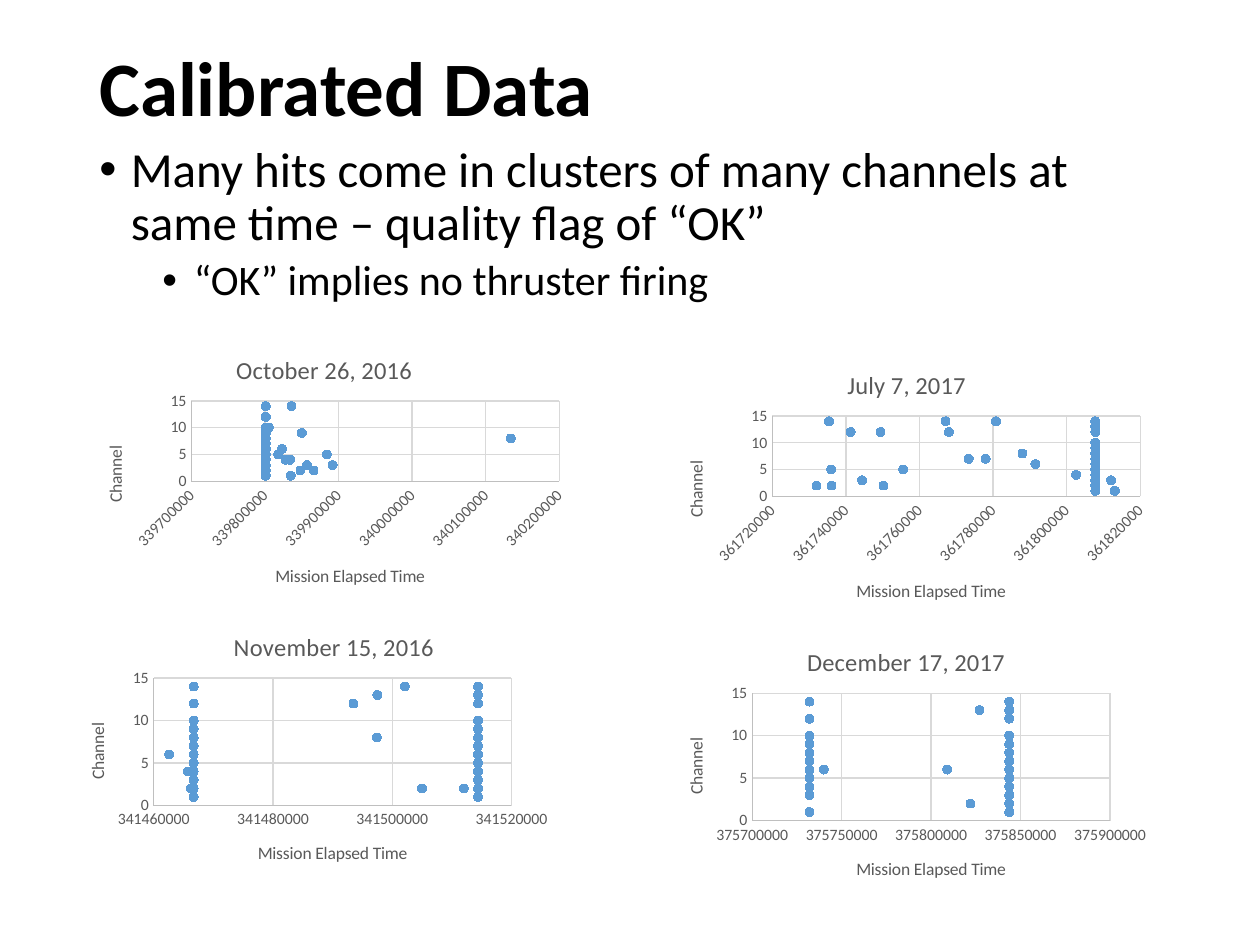
from lxml.etree import SubElement
from pptx import Presentation
from pptx.chart.data import XyChartData
from pptx.dml.color import RGBColor
from pptx.enum.chart import XL_CHART_TYPE, XL_MARKER_STYLE, XL_TICK_MARK
from pptx.enum.text import MSO_ANCHOR
from pptx.oxml import parse_xml
from pptx.oxml.ns import nsdecls, qn
from pptx.util import Inches, Pt

FONT = "Calibri"
COLORS = {"text": "000000", "label": "595959", "axis": "BFBFBF",
          "grid": "D9D9D9", "hit": "5B9BD5"}
TITLE = {"text": "Calibrated Data", "size": 44, "bold": True}
BULLETS = [
    {"text": "Many hits come in clusters of many channels at same time – quality flag of “OK”",
     "size": 28, "left": 0.25, "before": 0},
    {"text": "“OK” implies no thruster firing", "size": 24, "left": 0.75, "before": 5},
]
CHART_SIZE = (4, 2.2)
TIME_TITLE_AT = (0.4, 0.84)
CHANNEL_TITLE_AT = (0.06, 0.41)
SLANTED_PLOT = (0.24, 0.26, 0.73, 0.29)
LEVEL_PLOT = (0.2, 0.26, 0.71, 0.46)

# Hits are grouped as (mission elapsed time, channels hit at that time).
CHARTS = [
    {"title": "November 15, 2016", "at": (0.42, 4.81), "title_at": (0.35, 0.07),
     "plot": LEVEL_PLOT, "times": (341460000, 341520000, 20000),
     "hits": [
         (341462600, [6]), (341465700, [4]), (341466200, [2]),
         (341466700, [1, 2, 3, 4, 5, 6, 7, 8, 9, 10, 12, 14, 1, 2, 6]),
         (341493500, [12]), (341497400, [8]), (341497500, [13]),
         (341502100, [14]), (341505000, [2]), (341512000, [2]),
         (341514400, [13, 3, 4, 5, 6, 7, 8, 9, 10, 12, 13, 14, 1, 2, 3, 4, 5,
                      6, 7, 8, 9, 10, 12, 13, 14, 1, 2, 3])]},
    {"title": "July 7, 2017", "at": (5.17, 2.73), "title_at": (0.38, 0.07),
     "plot": SLANTED_PLOT, "times": (361720000, 361820000, 20000),
     "hits": [
         (361732000, [2]), (361735400, [14]), (361736000, [5]), (361736100, [2]),
         (361741300, [12]), (361744400, [3]), (361749400, [12]), (361750200, [2]),
         (361755600, [5]), (361767100, [14]), (361768000, [12]), (361773400, [7]),
         (361778000, [7]), (361780800, [14]), (361788000, [8]), (361791500, [6]),
         (361802600, [4]),
         (361807800, [5, 6, 4, 8, 9, 10, 7, 1, 13, 3, 12, 14, 2]),
         (361812100, [3]), (361813100, [1])]},
    {"title": "October 26, 2016", "at": (0.56, 2.61), "title_at": (0.32, 0.07),
     "plot": SLANTED_PLOT, "times": (339700000, 340200000, 100000),
     "hits": [
         (339801000, [3, 4, 5, 6, 7, 8, 9, 10, 12, 14, 1, 2, 8, 1]),
         (339805000, [10]), (339818000, [5]), (339823000, [6]), (339828000, [4]),
         (339834000, [4]), (339835000, [1]), (339836000, [14]), (339848000, [2]),
         (339850000, [9]), (339857000, [3]), (339866000, [2]), (339884000, [5]),
         (339892000, [3]), (340134000, [8])]},
    {"title": "December 17, 2017", "at": (5.17, 4.93), "title_at": (0.3, 0.07),
     "plot": LEVEL_PLOT, "times": (375700000, 375900000, 50000),
     "hits": [
         (375732000, [9, 12, 6, 7, 6, 4, 1, 10, 3, 8, 5, 14, 7]),
         (375740000, [6]), (375809000, [6]), (375822000, [2]), (375827000, [13]),
         (375843700, [13, 13, 2, 3, 3, 5, 6, 8, 8, 10, 10, 12, 12, 13, 14, 4, 2,
                      2, 14, 9, 4, 5, 1, 7, 1, 4, 3, 1])]},
]


def color(name):
    return RGBColor.from_string(COLORS[name])


def set_font(font, size, name="text", bold=False):
    for key, value in {"name": FONT, "size": Pt(size), "bold": bold}.items():
        setattr(font, key, value)
    font.color.rgb = color(name)


def add_box(slide, left, top, width, height):
    box = slide.shapes.add_textbox(*map(Inches, (left, top, width, height)))
    box.text_frame.word_wrap = True
    return box.text_frame


def fill_paragraph(para, text, size, bold=False):
    para.line_spacing = 0.9
    span = para.add_run()
    span.text = text
    set_font(span.font, size, bold=bold)


def set_layout(parent, index, shares, inner=False):
    """Place a chart part by shares of the chart's size."""
    for old in parent.findall(qn("c:layout")):
        parent.remove(old)
    layout = parse_xml(f"<c:layout {nsdecls('c')}><c:manualLayout/></c:layout>")
    parts = [("layoutTarget", "inner")] if inner else []
    parts += [("xMode", "edge"), ("yMode", "edge"), *zip("xywh", shares)]
    for tag, value in parts:
        SubElement(layout[0], qn(f"c:{tag}")).set("val", str(value))
    parent.insert(index, layout)


def set_title(title, text, size, shares):
    para = title.text_frame.paragraphs[0]
    span = para.add_run()
    span.text = text
    set_font(span.font, size, "label")
    set_layout(title._element, 1, shares)


def set_axis(axis, title, title_at, limits):
    low, high, step = limits
    values = {"minimum_scale": low, "maximum_scale": high, "major_unit": step,
              "major_tick_mark": XL_TICK_MARK.NONE, "minor_tick_mark": XL_TICK_MARK.NONE,
              "has_major_gridlines": True}
    for key, value in values.items():
        setattr(axis, key, value)
    for line, name in ((axis.format.line, "axis"), (axis.major_gridlines.format.line, "grid")):
        line.color.rgb = color(name)
        line.width = Pt(0.75)
    labels = axis.tick_labels
    labels.number_format = "0"
    labels.number_format_is_linked = False
    set_font(labels.font, 9, "label")
    set_title(axis.axis_title, title, 10, title_at)


def add_hits_chart(slide, item):
    data = XyChartData()
    series = data.add_series("Series 1")
    for time, channels in item["hits"]:
        for channel in channels:
            series.add_data_point(time, channel)
    frame = slide.shapes.add_chart(XL_CHART_TYPE.XY_SCATTER,
                                   *map(Inches, item["at"] + CHART_SIZE), data)
    chart = frame.chart
    chart.has_legend = False
    set_font(chart.font, 10)
    set_title(chart.chart_title, item["title"], 14, item["title_at"])
    times, channels = chart.category_axis, chart.value_axis
    set_axis(times, "Mission Elapsed Time", TIME_TITLE_AT, item["times"])
    set_axis(channels, "Channel", CHANNEL_TITLE_AT, (0, 15, 5))
    angle = -45 if item["plot"] is SLANTED_PLOT else 0
    times._element.find(qn("c:txPr")).find(qn("a:bodyPr")).set("rot", str(angle * 60000))
    channels.axis_title.text_frame._txBody.bodyPr.set("rot", str(-90 * 60000))

    plot = chart.plots[0]
    plot.vary_by_categories = False
    set_layout(plot._element.getparent(), 0, item["plot"], inner=True)
    dots = plot.series[0]
    dots.format.line.fill.background()
    dots.marker.style = XL_MARKER_STYLE.CIRCLE
    dots.marker.size = 5
    dots.marker.format.fill.solid()
    dots.marker.format.fill.fore_color.rgb = color("hit")
    dots.marker.format.line.color.rgb = color("hit")


def main():
    deck = Presentation()
    deck.slide_width, deck.slide_height = Inches(10), Inches(7.5)
    page = deck.slides.add_slide(deck.slide_layouts[6])

    heading = add_box(page, 0.69, 0, 8.62, 1.45)
    heading.vertical_anchor = MSO_ANCHOR.MIDDLE
    fill_paragraph(heading.paragraphs[0], **TITLE)

    body = add_box(page, 0.69, 1.1, 8.62, 5.65)
    for index, item in enumerate(BULLETS):
        para = body.add_paragraph() if index else body.paragraphs[0]
        para.level = index
        properties = para._p.get_or_add_pPr()
        properties.set("marL", str(Inches(item["left"])))
        properties.set("indent", str(Inches(-0.25)))
        SubElement(properties, qn("a:buFont")).set("typeface", "Arial")
        SubElement(properties, qn("a:buChar")).set("char", "•")
        para.space_before = Pt(item["before"])
        fill_paragraph(para, item["text"], item["size"])

    for item in CHARTS:
        add_hits_chart(page, item)
    deck.save("out.pptx")


if __name__ == "__main__":
    main()
